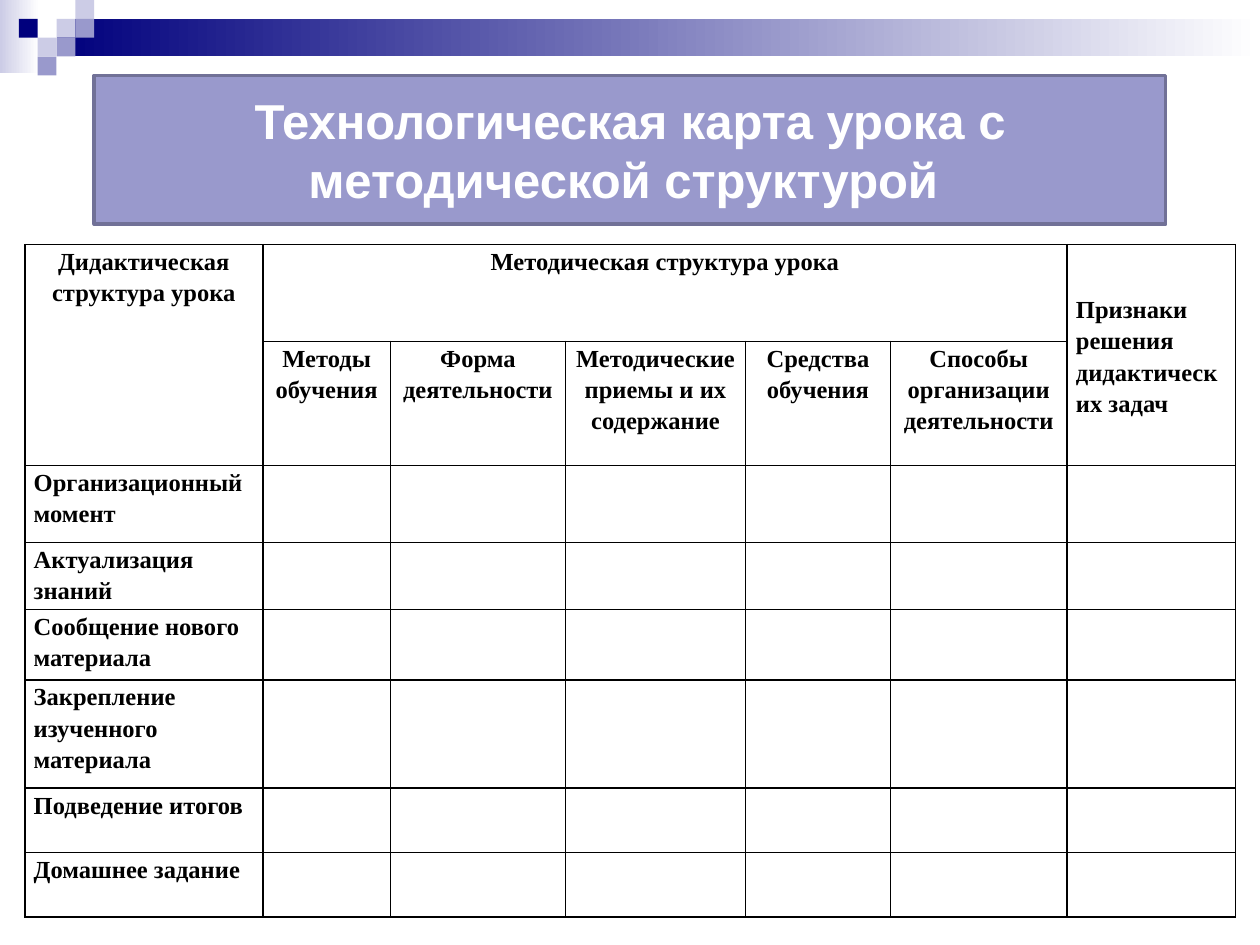
"""Build the lesson flow chart slide with its methodical structure table."""
import dataclasses

import lxml.etree
import pptx
import pptx.dml.color
import pptx.enum.shapes
import pptx.enum.text
import pptx.oxml.ns
import pptx.util

Cm = pptx.util.Cm
ALIGN = pptx.enum.text.PP_ALIGN
ANCHOR = pptx.enum.text.MSO_ANCHOR


@dataclasses.dataclass(frozen=True)
class Theme:
    """Colours, fonts and type sizes of the slide."""
    navy: str = "00007D"
    lavender: str = "9999CC"
    pale: str = "CCCCE6"
    frame: str = "717197"
    white: str = "FFFFFF"
    black: str = "000000"
    title_font: str = "Arial"
    table_font: str = "Times New Roman"
    title_size: int = 28
    table_size: int = 14


THEME = Theme()
SQUARE = 0.38
SQUARES = [
    (3, 1, THEME.pale), (4, 0, THEME.pale), (4, 1, THEME.lavender),
    (2, 2, THEME.pale), (1, 1, THEME.navy), (3, 2, THEME.lavender),
    (2, 3, THEME.lavender),
]
TITLE = "Технологическая карта урока с методической структурой "
COLUMN_WIDTHS = [4.8, 2.57, 3.53, 3.63, 2.92, 3.56, 3.4]
ROW_HEIGHTS = [1.95, 2.39, 1.55, 1.35, 1.42, 2.18, 1.3, 1.3]
MERGES = [((0, 0), (1, 0)), ((0, 1), (0, 5)), ((0, 6), (1, 6))]
METHOD_HEADINGS = [
    "Методы\nобучения",
    "Форма\nдеятельности",
    "Методические\nприемы и их\nсодержание",
    "Средства\nобучения",
    "Способы\nорганизации\nдеятельности",
]
STAGES = [
    "Организационный момент",
    "Актуализация знаний",
    "Сообщение нового материала",
    "Закрепление изученного материала",
    "Подведение итогов",
    "Домашнее задание",
]


def rgb(colour):
    """Return a colour object for a hexadecimal string."""
    return pptx.dml.color.RGBColor.from_string(colour)


def write_text(text_frame, text, *, font, size, colour, align=ALIGN.LEFT,
               line_spacing=None, space_after=0):
    """Write each line of bold text as one formatted paragraph."""
    for index, line in enumerate(text.split("\n")):
        paragraph = text_frame.add_paragraph() if index else text_frame.paragraphs[0]
        paragraph.alignment = align
        paragraph.line_spacing = line_spacing
        paragraph.space_before = pptx.util.Pt(0)
        paragraph.space_after = pptx.util.Pt(space_after)
        run = paragraph.add_run()
        run.text = line
        run.font.name = font
        run.font.size = pptx.util.Pt(size)
        run.font.bold = True
        run.font.color.rgb = rgb(colour)


class SlideBuilder:
    """Hold the theme and the current slide, and add elements to it."""

    def __init__(self, slide, theme):
        """Keep the slide and its theme."""
        self.slide = slide
        self.theme = theme

    def rectangle(self, left, top, width, height, colour, end_colour=None):
        """Add a borderless rectangle with a solid or gradient fill."""
        shape = self.slide.shapes.add_shape(
            pptx.enum.shapes.MSO_SHAPE.RECTANGLE,
            Cm(left), Cm(top), Cm(width), Cm(height))
        shape.shadow.inherit = False
        shape.line.fill.background()
        if end_colour:
            shape.fill.gradient()
            shape.fill.gradient_angle = 0
            for stop, stop_colour in zip(shape.fill.gradient_stops, (colour, end_colour)):
                stop.color.rgb = rgb(stop_colour)
        else:
            shape.fill.solid()
            shape.fill.fore_color.rgb = rgb(colour)

    def title(self, text, left, top, width, height):
        """Move, frame and fill the title placeholder."""
        shape = self.slide.shapes.title
        shape.left, shape.top = Cm(left), Cm(top)
        shape.width, shape.height = Cm(width), Cm(height)
        shape.fill.solid()
        shape.fill.fore_color.rgb = rgb(self.theme.lavender)
        shape.line.color.rgb = rgb(self.theme.frame)
        shape.line.width = pptx.util.Pt(2)
        text_frame = shape.text_frame
        text_frame.word_wrap = True
        text_frame.auto_size = pptx.enum.text.MSO_AUTO_SIZE.NONE
        text_frame.vertical_anchor = ANCHOR.MIDDLE
        write_text(text_frame, text, font=self.theme.title_font,
                   size=self.theme.title_size, colour=self.theme.white,
                   align=ALIGN.CENTER)

    def table(self, left, top, column_widths, row_heights, merges):
        """Add a plain bordered table and return it."""
        table = self.slide.shapes.add_table(
            len(row_heights), len(column_widths), Cm(left), Cm(top),
            Cm(sum(column_widths)), Cm(sum(row_heights))).table
        table.first_row = table.horz_banding = False
        for column, width in zip(table.columns, column_widths):
            column.width = Cm(width)
        for row, height in zip(table.rows, row_heights):
            row.height = Cm(height)
        for cell in table.iter_cells():
            self.border(cell)
            cell.fill.background()
        for first, last in merges:
            table.cell(*first).merge(table.cell(*last))
        return table

    def border(self, cell):
        """Draw a thin line on all four sides of a cell."""
        qn = pptx.oxml.ns.qn
        properties = cell._tc.get_or_add_tcPr()
        for side in ("a:lnL", "a:lnR", "a:lnT", "a:lnB"):
            line = lxml.etree.SubElement(properties, qn(side), w=str(pptx.util.Pt(1)))
            fill = lxml.etree.SubElement(line, qn("a:solidFill"))
            lxml.etree.SubElement(fill, qn("a:srgbClr"), val=self.theme.black)

    def cell(self, cell, text, margin=0.18, anchor=ANCHOR.TOP, **text_format):
        """Write table text into one cell."""
        cell.margin_left = cell.margin_right = Cm(margin)
        cell.margin_top = cell.margin_bottom = 0
        cell.vertical_anchor = anchor
        write_text(cell.text_frame, text, font=self.theme.table_font,
                   size=self.theme.table_size, colour=self.theme.black,
                   line_spacing=1.15, **text_format)


def main():
    """Build and save the presentation."""
    presentation = pptx.Presentation()
    presentation.slide_width, presentation.slide_height = Cm(25.4), Cm(19.05)
    slide = presentation.slides.add_slide(presentation.slide_layouts[5])
    builder = SlideBuilder(slide, THEME)

    builder.rectangle(0, 0, 0.79, 1.47, THEME.pale, THEME.white)
    builder.rectangle(3 * SQUARE, SQUARE, 24.26, 2 * SQUARE, THEME.navy, THEME.white)
    for column, row, colour in SQUARES:
        builder.rectangle(column * SQUARE, row * SQUARE, SQUARE, SQUARE, colour)
    builder.title(TITLE, 1.9, 1.52, 21.6, 3)

    table = builder.table(0.5, 4.93, COLUMN_WIDTHS, ROW_HEIGHTS, MERGES)
    builder.cell(table.cell(0, 0), "Дидактическая структура урока", align=ALIGN.CENTER)
    builder.cell(table.cell(0, 1), "Методическая структура урока", align=ALIGN.CENTER)
    builder.cell(table.cell(0, 6), "Признаки решения дидактических задач",
                 anchor=ANCHOR.MIDDLE, space_after=10)
    for column, heading in enumerate(METHOD_HEADINGS, start=1):
        builder.cell(table.cell(1, column), heading, margin=0, align=ALIGN.CENTER)
    for row, stage in enumerate(STAGES, start=2):
        builder.cell(table.cell(row, 0), stage, space_after=10)

    presentation.save("out.pptx")


if __name__ == "__main__":
    main()
